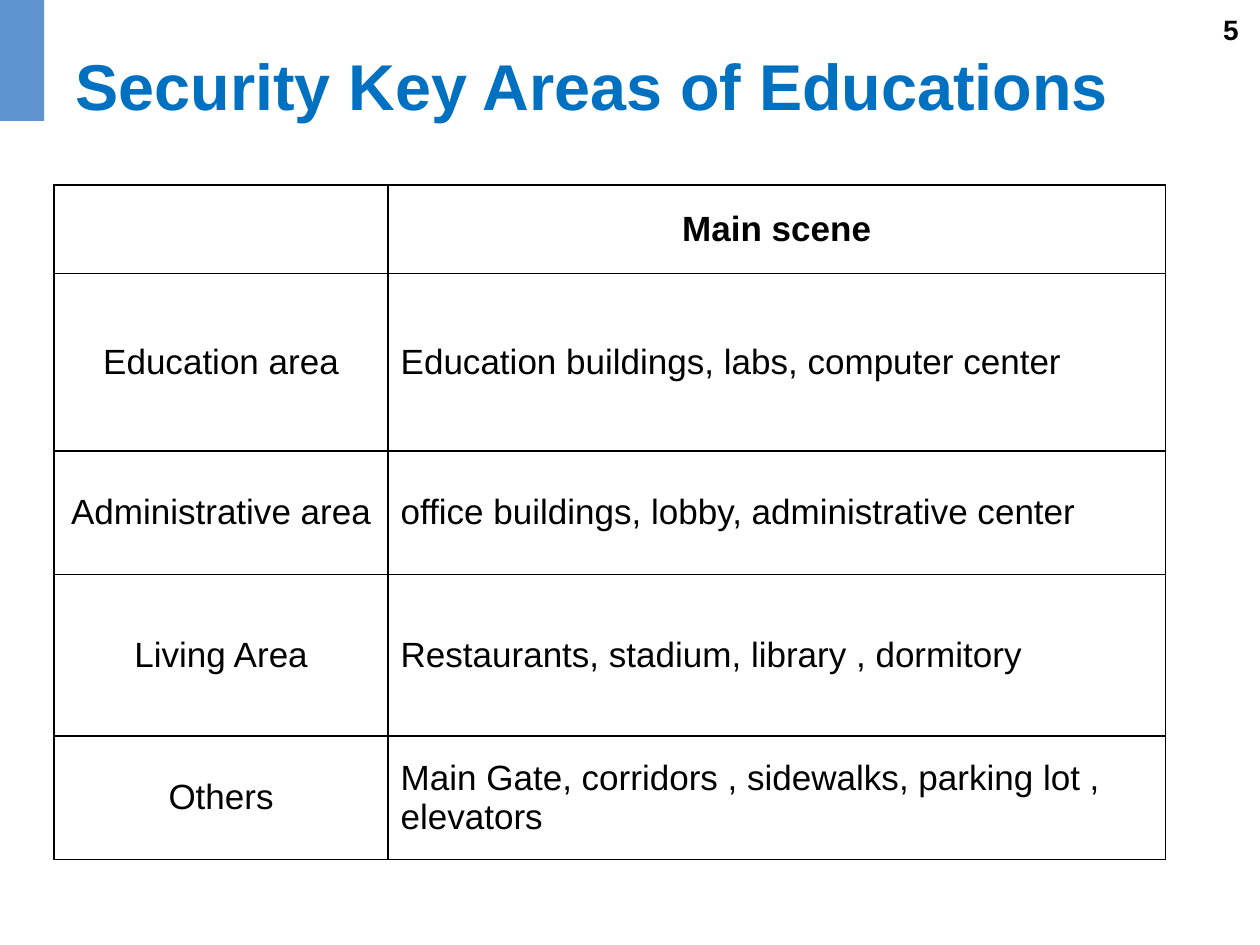
import dataclasses
import pptx
import pptx.dml.color
import pptx.enum.shapes
import pptx.enum.text
import pptx.oxml
import pptx.oxml.ns
import pptx.util

ALIGN = pptx.enum.text.PP_ALIGN
ANCHOR = pptx.enum.text.MSO_ANCHOR
SCALE = 9144


@dataclasses.dataclass(frozen=True)
class Theme:
    """Hold the colours, font and type sizes of the slide."""
    font: str = "Arial"
    ink: str = "000000"
    head: str = "0070C0"
    bar: str = "6094CE"
    title: int = 37
    body: int = 20
    page: int = 16
    line: int = 1


THEME = Theme()
AREAS = [
    ("", "Main scene", 70),
    ("Education area", "Education buildings, labs, computer center", 141),
    ("Administrative area", "office buildings, lobby, administrative center", 98),
    ("Living Area", "Restaurants, stadium, library , dormitory", 128),
    ("Others", "Main Gate, corridors , sidewalks, parking lot , elevators", 98),
]


def px(size):
    """Turn px into EMU."""
    return pptx.util.Emu(size * SCALE)


def rgb(code):
    """Make a colour from its hex code."""
    return pptx.dml.color.RGBColor.from_string(code)


def write(frame, text, size, color=THEME.ink, bold=False, align=ALIGN.LEFT):
    """Put one styled paragraph in a text frame."""
    frame.word_wrap = True
    para = frame.paragraphs[0]
    para.text = text
    para.alignment = align
    font = para.font
    font.name, font.size, font.bold = THEME.font, pptx.util.Pt(size), bold
    font.color.rgb = rgb(color)


def edge(cell):
    """Draw a thin line on all four sides of a cell."""
    props = cell._tc.get_or_add_tcPr()
    width = pptx.util.Pt(THEME.line)
    for spot, side in enumerate(("lnL", "lnR", "lnT", "lnB")):
        props.insert(spot, pptx.oxml.parse_xml(
            f'<a:{side} {pptx.oxml.ns.nsdecls("a")} w="{width}"><a:solidFill>'
            f'<a:srgbClr val="{THEME.ink}"/></a:solidFill></a:{side}>'))


def header(slide, left, top, width, height):
    """Place the side bar, title and page number in the header box."""
    box = slide.shapes.add_textbox(
        px(left + width - 240), px(top), px(233), px(52))
    write(box.text_frame, "5", THEME.page, bold=True, align=ALIGN.RIGHT)
    title = slide.shapes.title
    title.left, title.top = px(left + 50), px(top)
    title.width, title.height = px(width - 100), px(height)
    title.text_frame.vertical_anchor = ANCHOR.MIDDLE
    write(title.text_frame, "Security Key Areas of Educations",
          THEME.title, THEME.head, True)
    bar = slide.shapes.add_shape(
        pptx.enum.shapes.MSO_SHAPE.RECTANGLE,
        px(left), px(top - 8), px(35), px(99))
    bar.shadow.inherit = False
    bar.fill.solid()
    bar.fill.fore_color.rgb = rgb(THEME.bar)
    bar.line.fill.background()


def grid(slide, left, top, width, first):
    """Place the table of areas and their scenes."""
    total = sum(area[2] for area in AREAS)
    table = slide.shapes.add_table(
        len(AREAS), 2, px(left), px(top), px(width), px(total)).table
    table.first_row = table.horz_banding = False
    for col, span in zip(table.columns, (first, width - first)):
        col.width = px(span)
    for row, (*words, height) in enumerate(AREAS):
        table.rows[row].height = px(height)
        for col, text in enumerate(words):
            cell = table.cell(row, col)
            cell.fill.background()
            cell.vertical_anchor = ANCHOR.MIDDLE
            mid = row == 0 or col == 0
            write(cell.text_frame, text, THEME.body, bold=row == 0,
                  align=ALIGN.CENTER if mid else ALIGN.LEFT)
            edge(cell)


def main():
    """Build and save the slide."""
    deck = pptx.Presentation()
    deck.slide_width, deck.slide_height = px(1000), px(750)
    slide = deck.slides.add_slide(deck.slide_layouts[5])
    header(slide, 0, 5, 1000, 125)
    grid(slide, 43, 147, 882, 265)
    deck.save("out.pptx")


if __name__ == "__main__":
    main()
